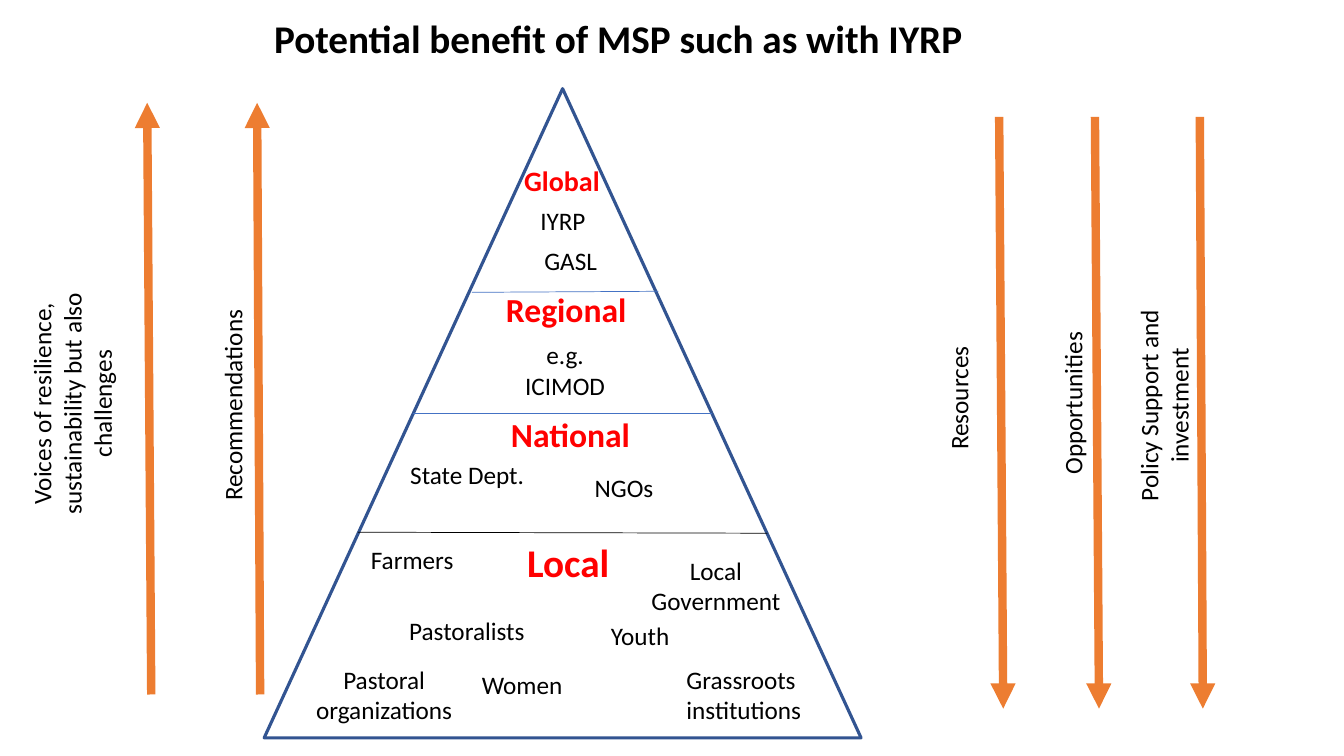
from pptx import Presentation
from pptx import util as u
from pptx.dml import color
from pptx.enum import shapes, text
from pptx.oxml import ns
from lxml import etree

SCALE = 9144
deck = Presentation()
deck.slide_width, deck.slide_height = 1333 * SCALE, 750 * SCALE
slide = deck.slides.add_slide(deck.slide_layouts[6])
page = slide.shapes


def hue(code):
    return color.RGBColor.from_string(code)


def put(words, x, y, w, h, size=18, ink="000000", bold=False, mid=False, turn=0):
    box = page.add_textbox(*(n * SCALE for n in (x, y, w, h)))
    box.rotation = turn
    frame = box.text_frame
    frame.word_wrap = True
    para = frame.paragraphs[0]
    para.text = words
    para.alignment = text.PP_ALIGN.CENTER if mid else text.PP_ALIGN.LEFT
    font = para.font
    font.name, font.size, font.bold = "Calibri", u.Pt(size), bold
    font.color.rgb = hue(ink)


peak = page.add_shape(shapes.MSO_SHAPE.ISOSCELES_TRIANGLE,
                      *(n * SCALE for n in (262, 88, 592, 644)))
peak.shadow.inherit = False
peak.fill.background()
peak.line.color.rgb = hue("325491")
peak.line.width = u.Pt(2.25)

rules = [
    (355, 528, 761, 529, "000000"),
    (410, 410, 706, 410, "4472C4"),
    (468, 290, 653, 289, "4472C4"),
]
arrows = [
    (150, 689, 146, 102),
    (258, 689, 255, 102),
    (991, 116, 995, 703),
    (1086, 116, 1090, 703),
    (1190, 116, 1193, 703),
]
lines = [(*r, 0.5, False) for r in rules]
lines += [(*a, "ED7D31", 6, True) for a in arrows]
for *ends, ink, width, head in lines:
    link = page.add_connector(shapes.MSO_CONNECTOR.STRAIGHT, *(n * SCALE for n in ends))
    link.line.color.rgb = hue(ink)
    link.line.width = u.Pt(width)
    if head:
        etree.SubElement(link.line._get_or_add_ln(), ns.qn("a:tailEnd"), type="triangle")
    etree.SubElement(link._element.spPr, ns.qn("a:effectLst"))

put("Potential benefit of MSP such as with IYRP", 262, 9, 754, 57, size=28, bold=True)

levels = [
    ("Global", 510, 157, 174, 44, 20),
    ("Regional", 492, 282, 174, 50, 24),
    ("National", 497, 406, 174, 50, 24),
    ("Local", 513, 529, 122, 57, 28),
]
for *spot, size in levels:
    put(*spot, size=size, ink="FF0000", bold=True)

actors = [
    ("IYRP", 526, 199),
    ("GASL", 530, 238),
    ("State Dept.", 397, 451),
    ("NGOs", 580, 464),
    ("Farmers", 358, 535),
    ("Pastoralists", 396, 606),
    ("Youth", 596, 610),
    ("Women", 468, 659),
]
for name, x, y in actors:
    put(name, x, y, 141, 40)
put("Grassroots institutions", 671, 654, 141, 71)

pairs = [
    ("e.g.\nICIMOD", 490, 332, 141),
    ("Local Government", 626, 546, 168),
    ("Pastoral organizations", 295, 654, 172),
]
for name, x, y, w in pairs:
    put(name, x, y, w, 71, mid=True)

flows = [
    ("Voices of resilience, sustainability but also challenges", -57, 350, 101),
    ("Recommendations", 102, 382, 40),
    ("Resources", 822, 375, 40),
    ("Opportunities", 935, 380, 40),
    ("Policy Support and investment", 1026, 367, 71),
]
for name, x, y, h in flows:
    put(name, x, y, 257, h, mid=True, turn=270)

deck.save("out.pptx")
